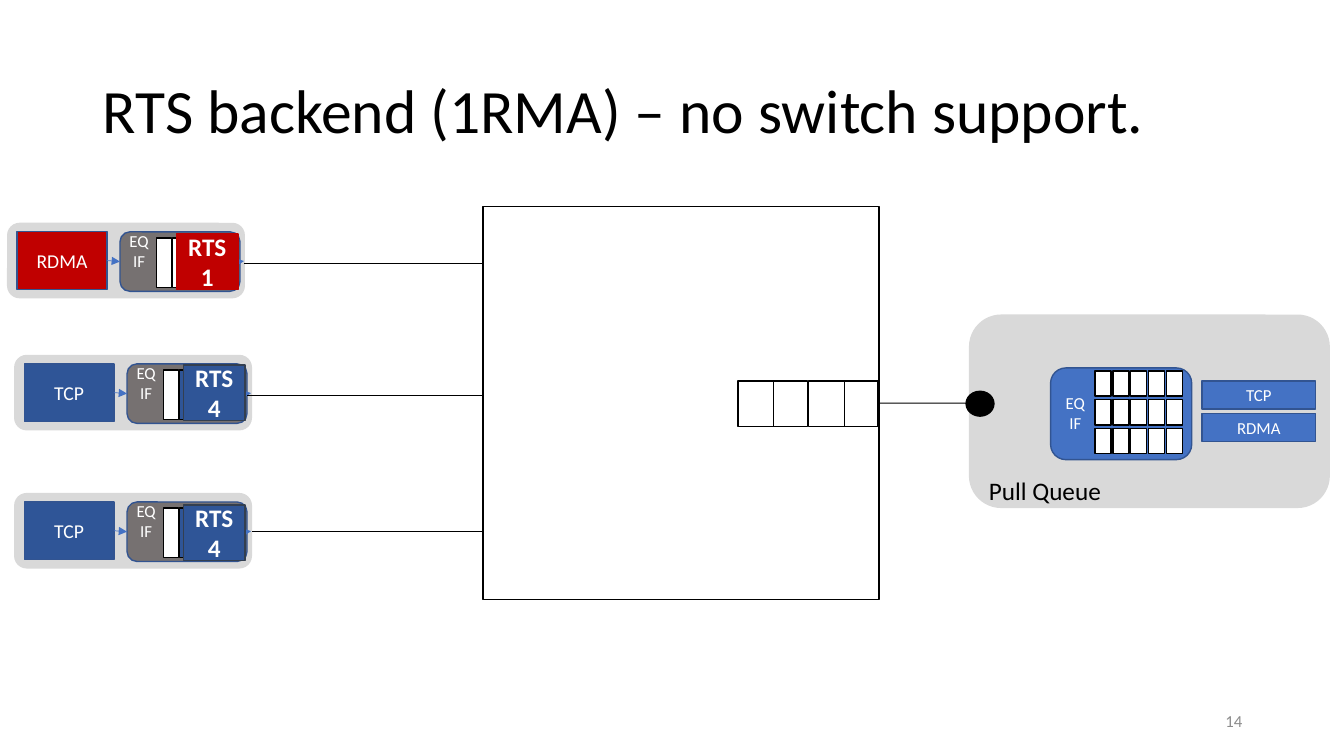
from pptx import Presentation
from pptx.dml.color import RGBColor
from pptx.enum.shapes import MSO_CONNECTOR as CONN, MSO_SHAPE as SHAPE
from pptx.enum.text import MSO_ANCHOR as ANCHOR, PP_ALIGN as ALIGN
from pptx.oxml.ns import qn
from pptx.util import Inches, Pt
from lxml import etree

BLACK, WHITE = "000000", "FFFFFF"
PANEL, EQ_GRAY = "D9D9D9", "767171"
RED, NAVY, BLUE, OUTLINE = "C00000", "2F5597", "4472C4", "325491"


def rgb(color):
    return RGBColor.from_string(color)


def write(sp, text, size, color, align=ALIGN.CENTER, anchor=ANCHOR.MIDDLE,
          bold=False, wrap=True):
    tf = sp.text_frame
    tf.text = text
    tf.word_wrap = wrap
    tf.vertical_anchor = anchor
    for p in tf.paragraphs:
        p.alignment = align
        for r in p.runs:
            r.font.name = "Calibri"
            r.font.size = Pt(size)
            r.font.bold = bold
            r.font.color.rgb = rgb(color)
    return tf


def add_box(s, kind, x, y, w, h, fill=None, line=None, width=1):
    sp = s.shapes.add_shape(kind, Inches(x), Inches(y), Inches(w), Inches(h))
    sp.shadow.inherit = False
    if fill:
        sp.fill.solid()
        sp.fill.fore_color.rgb = rgb(fill)
    else:
        sp.fill.background()
    if line:
        sp.line.color.rgb = rgb(line)
        sp.line.width = Pt(width)
    else:
        sp.line.fill.background()
    return sp


def add_text(s, x, y, w, h, text, size, color, **style):
    sp = s.shapes.add_textbox(Inches(x), Inches(y), Inches(w), Inches(h))
    return write(sp, text, size, color, **style)


def add_line(s, x1, y1, x2, y2, color=BLACK, width=0.75, arrow=False):
    cx = s.shapes.add_connector(CONN.STRAIGHT, Inches(x1), Inches(y1),
                                Inches(x2), Inches(y2))
    cx.line.color.rgb = rgb(color)
    cx.line.width = Pt(width)
    if arrow:
        etree.SubElement(cx.line._get_or_add_ln(), qn("a:tailEnd"), type="triangle")
    etree.SubElement(cx._element.spPr, qn("a:effectLst"))
    return cx


def add_slots(s, x, y, w, h, pitch, fills):
    for i, fill in enumerate(fills):
        add_box(s, SHAPE.RECTANGLE, x + i * pitch, y, w, h, fill, BLACK)


def add_title(s, x, y, w, h):
    tf = add_text(s, x, y, w, h, "RTS backend (1RMA) – no switch support.",
                  44, BLACK, align=ALIGN.LEFT)
    tf.paragraphs[0].line_spacing = 0.9


def add_sender(s, x, y, app, color, second_slot, rts, rts_line, rts_dy):
    add_box(s, SHAPE.ROUNDED_RECTANGLE, x, y, 2.36, 0.75, PANEL)
    host = add_box(s, SHAPE.RECTANGLE, x + 0.1, y + 0.09, 0.89, 0.57, color, OUTLINE)
    write(host, app, 14, WHITE)
    eq = add_box(s, SHAPE.ROUNDED_RECTANGLE, x + 1.12, y + 0.09, 1.19, 0.59,
                 EQ_GRAY, OUTLINE)
    mid = y + 0.38
    inner = add_line(s, x + 1, mid, x + 1.12, mid, BLUE, 0.5, arrow=True)
    inner.begin_connect(host, 3)
    inner.end_connect(eq, 1)
    outer = add_line(s, x + 2.31, mid, x + 2.35, mid, BLUE, 0.5, arrow=True)
    outer.begin_connect(eq, 3)
    add_text(s, x + 1.11, y + 0.03, 0.4, 0.5, "EQ\nIF", 12, WHITE,
             anchor=ANCHOR.TOP, wrap=False)
    add_slots(s, x + 1.48, y + 0.15, 0.15, 0.49, 0.16, [WHITE, second_slot])
    tag = add_box(s, SHAPE.RECTANGLE, x + 1.68, y + rts_dy, 0.61, 0.55, color, rts_line)
    write(tag, f"RTS\n{rts}", 18, WHITE, bold=True)


def add_switch(s, x, y, w, h):
    switch = add_box(s, SHAPE.RECTANGLE, x, y, w, h, line=BLACK)
    for i in range(2):
        left, top = x + 2.53 + 0.7 * i, y + 1.73
        add_box(s, SHAPE.RECTANGLE, left, top, 0.69, 0.45, line=BLACK)
        add_line(s, left + 0.35, top, left + 0.35, top + 0.45, width=0.5)
    return switch


def add_receiver(s, x, y, w, h):
    add_box(s, SHAPE.ROUNDED_RECTANGLE, x, y, w, h, PANEL)
    add_box(s, SHAPE.OVAL, x - 0.03, y + 0.76, 0.28, 0.25, BLACK, BLACK, 0.75)
    add_text(s, x + 0.1, y + 1.55, 1.33, 0.4, "Pull Queue", 18, BLACK,
             align=ALIGN.LEFT, anchor=ANCHOR.TOP, wrap=False)
    add_box(s, SHAPE.ROUNDED_RECTANGLE, x + 0.81, y + 0.53, 1.4, 0.91, BLUE, OUTLINE)
    for row in range(3):
        add_slots(s, x + 1.25, y + 0.56 + row * 0.57 / 2, 0.16, 0.25, 0.71 / 4,
                  [WHITE] * 5)
    add_text(s, x + 0.77, y + 0.73, 0.57, 0.5, "EQ\nIF", 12, WHITE, anchor=ANCHOR.TOP)
    for i, app in enumerate(["TCP", "RDMA"]):
        sp = add_box(s, SHAPE.RECTANGLE, x + 2.31, y + 0.66 + 0.32 * i, 1.13, 0.28,
                     BLUE, OUTLINE)
        write(sp, app, 12, WHITE)


def main():
    prs = Presentation()
    prs.slide_width, prs.slide_height = Inches(13.33), Inches(7.5)
    s = prs.slides.add_slide(prs.slide_layouts[6])
    add_title(s, 0.92, 0.4, 11.5, 1.45)
    switch = add_switch(s, 4.79, 2.05, 3.93, 3.9)
    add_receiver(s, 9.61, 3.12, 3.58, 1.92)
    add_sender(s, 0.07, 2.21, "RDMA", RED, WHITE, 1, RED, 0.11)
    add_sender(s, 0.14, 3.52, "TCP", NAVY, NAVY, 4, "333F50", 0.1)
    add_sender(s, 0.14, 4.89, "TCP", NAVY, NAVY, 4, "333F50", 0.12)
    for x, y in [(2.42, 2.61), (2.45, 3.92), (2.5, 5.27)]:
        add_line(s, x, y, 4.79, y)
    add_line(s, 8.72, 4, 9.58, 4).begin_connect(switch, 3)
    add_text(s, 9.42, 6.95, 3, 0.4, "14", 12, "8C8C8C", align=ALIGN.RIGHT)
    prs.save("out.pptx")


if __name__ == "__main__":
    main()
